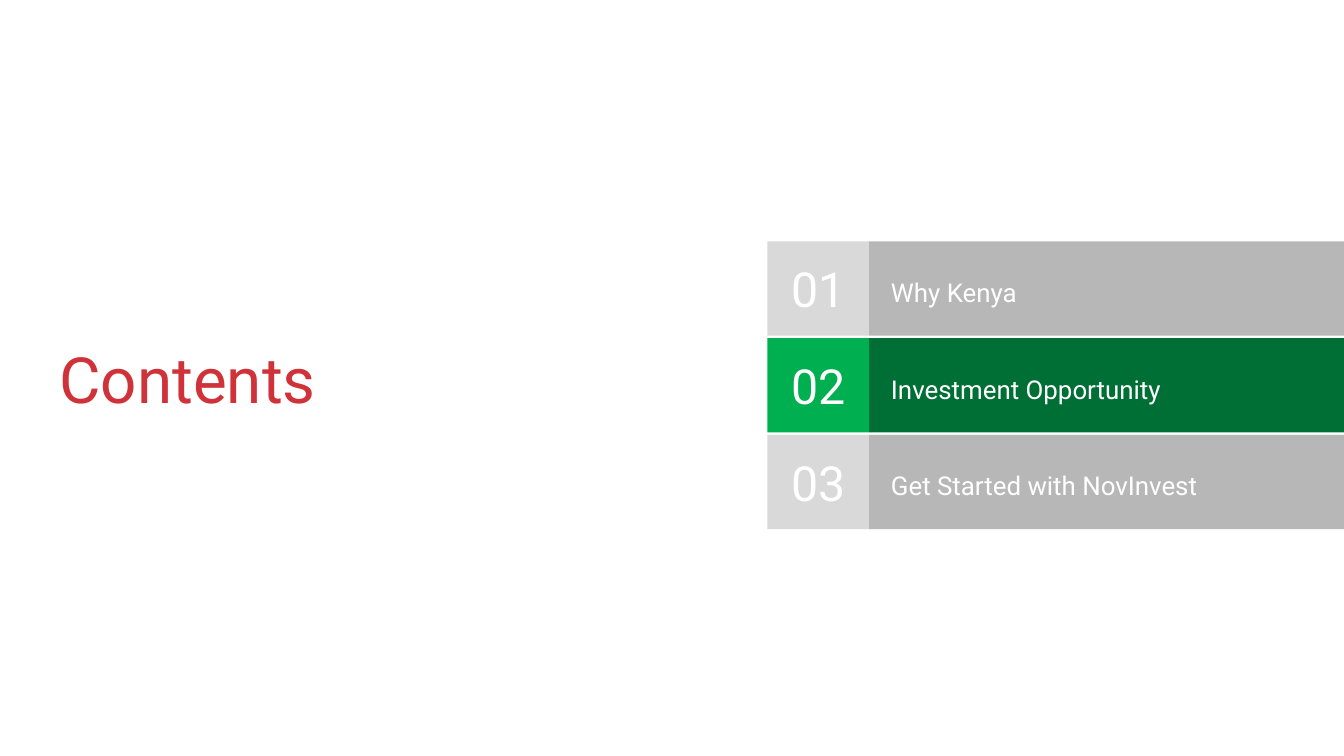
import pptx
import pptx.dml.color
import pptx.enum.shapes
import pptx.enum.text
import pptx.util

Inches = pptx.util.Inches
RGBColor = pptx.dml.color.RGBColor
Align = pptx.enum.text.PP_ALIGN

WHITE = RGBColor(0xFF, 0xFF, 0xFF)
RED = RGBColor(0xCF, 0x33, 0x39)
GREY = RGBColor(0xB7, 0xB7, 0xB7)
LIGHT_GREY = RGBColor(0xD9, 0xD9, 0xD9)
GREEN = RGBColor(0x00, 0x6F, 0x35)
BRIGHT_GREEN = RGBColor(0x00, 0xB0, 0x50)

NUMBER_LEFT = 15.23
NUMBER_WIDTH = 2.01
BAR_LEFT = NUMBER_LEFT + NUMBER_WIDTH
BAR_WIDTH = 9.43
ROW_TOP = 4.79
ROW_HEIGHT = 1.87
ROW_STEP = 1.92
LABEL_HEIGHT = 1.45


class ContentsPage:
    font_name = "Roboto"
    inset = Inches(0.27)

    def __init__(self, page):
        self.page = page

    def set_text(self, shape, text, size, color, align=Align.LEFT, spacing=1.0):
        frame = shape.text_frame
        frame.word_wrap = True
        frame.vertical_anchor = pptx.enum.text.MSO_ANCHOR.MIDDLE
        frame.margin_left = frame.margin_right = self.inset
        frame.margin_top = frame.margin_bottom = self.inset
        paragraph = frame.paragraphs[0]
        paragraph.text = text
        paragraph.alignment = align
        paragraph.line_spacing = spacing
        paragraph.font.name = self.font_name
        paragraph.font.size = pptx.util.Pt(size)
        paragraph.font.color.rgb = color

    def text_box(self, shapes, left, top, width, height, text, size, color, spacing):
        box = shapes.add_textbox(Inches(left), Inches(top), Inches(width), Inches(height))
        self.set_text(box, text, size, color, spacing=spacing)

    def rectangle(self, shapes, left, top, width, height, color):
        shape = shapes.add_shape(
            pptx.enum.shapes.MSO_SHAPE.RECTANGLE,
            Inches(left), Inches(top), Inches(width), Inches(height),
        )
        shape.shadow.inherit = False
        shape.fill.solid()
        shape.fill.fore_color.rgb = color
        shape.line.fill.background()
        return shape

    def row(self, index, label, label_width, bar_color, number_color):
        top = ROW_TOP + index * ROW_STEP
        shapes = self.page.shapes.add_group_shape().shapes
        self.rectangle(shapes, BAR_LEFT, top, BAR_WIDTH, ROW_HEIGHT, bar_color)
        self.text_box(shapes, BAR_LEFT + 0.17, top + 0.23, label_width, LABEL_HEIGHT,
                      label, 37, WHITE, 1.15)
        number = self.rectangle(shapes, NUMBER_LEFT, top, NUMBER_WIDTH, ROW_HEIGHT, number_color)
        self.set_text(number, f"{index + 1:02d}", 69, WHITE, Align.CENTER)


def main():
    deck = pptx.Presentation()
    deck.slide_width = Inches(26.67)
    deck.slide_height = Inches(15)
    contents = ContentsPage(deck.slides.add_slide(deck.slide_layouts[6]))
    contents.text_box(contents.page.shapes, 0.91, 5.09, 9.3, 5.09, "Contents", 91, RED, 0.8)
    rows = [
        ("Why Kenya", 6.93, GREY, LIGHT_GREY),
        ("Investment Opportunity", 8.52, GREEN, BRIGHT_GREEN),
        ("Get Started with NovInvest", 7.71, GREY, LIGHT_GREY),
    ]
    for index, row in enumerate(rows):
        contents.row(index, *row)
    deck.save("out.pptx")


if __name__ == "__main__":
    main()
